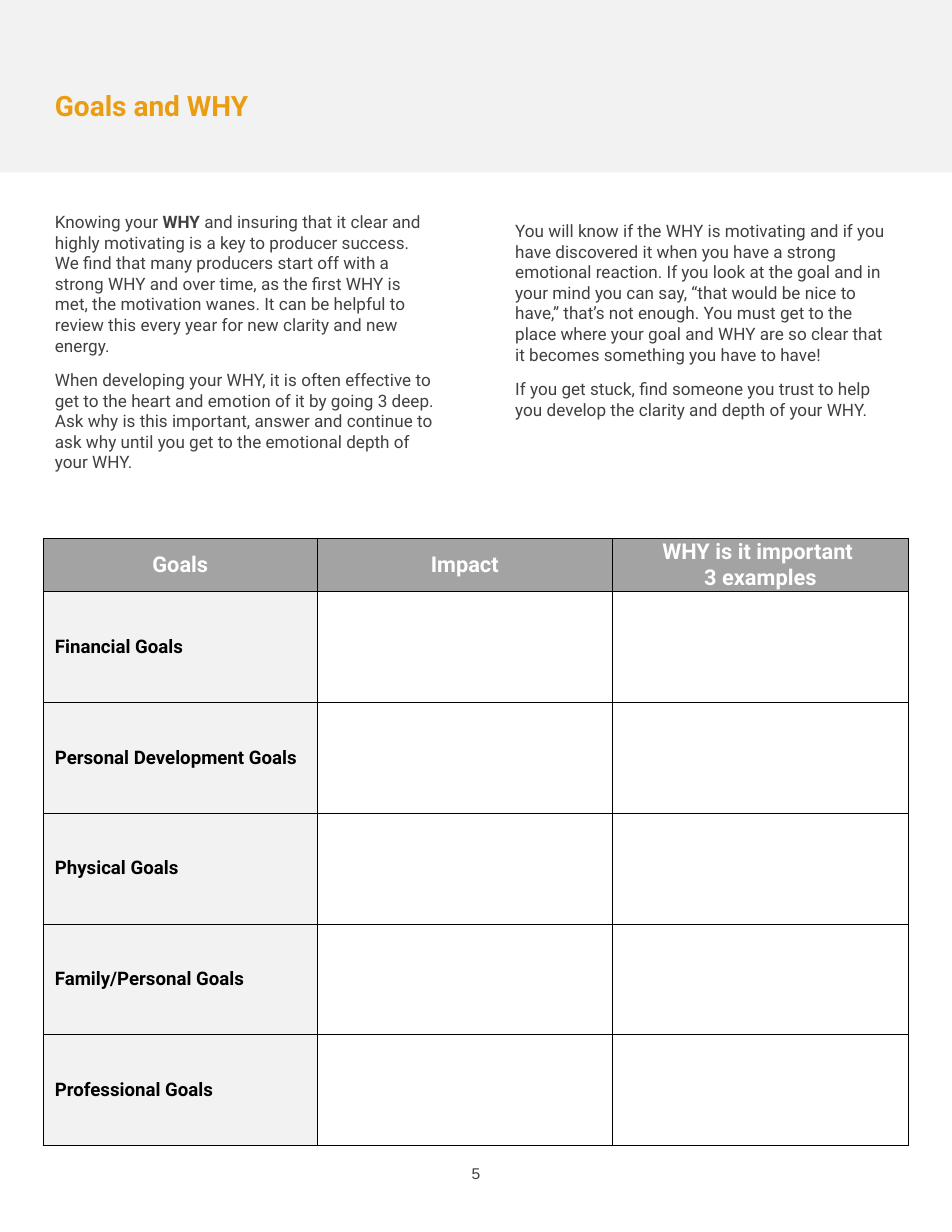
"""Build the Goals and WHY worksheet page."""
from dataclasses import dataclass

from pptx import Presentation
from pptx.dml.color import RGBColor
from pptx.enum.shapes import MSO_SHAPE
from pptx.enum.text import MSO_ANCHOR, MSO_AUTO_SIZE, PP_ALIGN
from pptx.oxml import parse_xml
from pptx.oxml.ns import nsdecls
from pptx.util import Inches, Pt

ORANGE, DARK, BLACK, WHITE = "EB9C0F", "404040", "000000", "FFFFFF"
PALE, GREY = "F2F2F2", "A3A3A3"


@dataclass
class TextStyle:
    size: float
    color: str
    bold: bool = False
    font: str = "Roboto"


@dataclass
class Column:
    left: float
    top: float
    height: float
    paragraphs: tuple


TITLE = TextStyle(18, ORANGE, True)
BODY = TextStyle(11, DARK)
HEADING = TextStyle(14, WHITE, True)
GOAL = TextStyle(12, BLACK, True)
PAGE_NUMBER = TextStyle(10, DARK, font="Arial")

COLUMNS = (
    Column(0.39, 1.84, 2.45, (
        "Knowing your **WHY** and insuring that it clear and highly motivating is a key to "
        "producer success. We find that many producers start off with a strong WHY and over "
        "time, as the first WHY is met, the motivation wanes. It can be helpful to review "
        "this every year for new clarity and new energy.",
        "When developing your WHY, it is often effective to get to the heart and emotion of "
        "it by going 3 deep. Ask why is this important, answer and continue to ask why until "
        "you get to the emotional depth of your WHY.",
    )),
    Column(4.5, 1.92, 1.89, (
        "You will know if the WHY is motivating and if you have discovered it when you have "
        "a strong emotional reaction. If you look at the goal and in your mind you can say, "
        "“that would be nice to have,” that’s not enough. You must get to the place where "
        "your goal and WHY are so clear that it becomes something you have to have!",
        "If you get stuck, find someone you trust to help you develop the clarity and depth "
        "of your WHY.",
    )),
)
HEADINGS = ("Goals", "Impact", "WHY is it important \v3 examples")
GOALS = ("Financial Goals", "Personal Development Goals", "Physical Goals",
         "Family/Personal Goals", "Professional Goals")
COLUMN_WIDTHS = (2.44, 2.64, 2.64)
HEADING_HEIGHT, GOAL_HEIGHT = 0.47, 0.99


def rgb(color: str) -> RGBColor:
    """Turn a hex string into a colour."""
    return RGBColor.from_string(color)


def place(shape, left: float, top: float, width: float, height: float) -> None:
    """Set position and size in inches."""
    shape.left, shape.top = Inches(left), Inches(top)
    shape.width, shape.height = Inches(width), Inches(height)


def format_run(run, style: TextStyle, bold: bool) -> None:
    """Apply a text style to one run."""
    run.font.name, run.font.size = style.font, Pt(style.size)
    run.font.bold, run.font.color.rgb = bold, rgb(style.color)


def format_paragraph(paragraph, style: TextStyle, align=PP_ALIGN.LEFT) -> None:
    """Align a paragraph and style its runs."""
    paragraph.alignment = align
    for run in paragraph.runs:
        format_run(run, style, style.bold)


def add_title(slide, title: str) -> None:
    """Fill the title placeholder."""
    place(slide.shapes.title, 0.39, 0.74, 2.08, 0.4)
    frame = slide.shapes.title.text_frame
    frame.text = title
    frame.auto_size = MSO_AUTO_SIZE.NONE
    frame.vertical_anchor = MSO_ANCHOR.MIDDLE
    format_paragraph(frame.paragraphs[0], TITLE)


def add_band(slide) -> None:
    """Draw the pale band behind the title."""
    band = slide.shapes.add_shape(MSO_SHAPE.RECTANGLE, 0, 0, Inches(8.5), Inches(1.54))
    band.shadow.inherit = False
    band.fill.solid()
    band.fill.fore_color.rgb = rgb(PALE)
    band.line.fill.background()
    slide.shapes.element.insert(2, band.element)


def fill_column(placeholder, column: Column) -> None:
    """Write a text column, with ** around bold words."""
    place(placeholder, column.left, column.top, 3.61, column.height)
    frame = placeholder.text_frame
    frame.auto_size = MSO_AUTO_SIZE.NONE
    frame.text = "\n".join(column.paragraphs)
    for paragraph, wording in zip(frame.paragraphs, column.paragraphs):
        paragraph.clear()
        paragraph.space_before, paragraph.space_after = Pt(0), Pt(9)
        properties = paragraph._p.get_or_add_pPr()
        properties.set("marL", "0")
        properties.set("indent", "0")
        properties.append(parse_xml(f"<a:buNone {nsdecls('a')}/>"))
        for index, part in enumerate(wording.split("**")):
            run = paragraph.add_run()
            run.text = part
            format_run(run, BODY, index % 2 == 1)


def add_borders(cell) -> None:
    """Draw thin black lines on all four sides of a cell."""
    properties = cell._tc.get_or_add_tcPr()
    for side in ("lnL", "lnR", "lnT", "lnB"):
        properties.append(parse_xml(
            f'<a:{side} {nsdecls("a")} w="{Pt(0.5)}"><a:solidFill>'
            f'<a:srgbClr val="{BLACK}"/></a:solidFill></a:{side}>'))


def fill_cell(cell, wording: str, style: TextStyle, color: str, align=PP_ALIGN.LEFT) -> None:
    """Write and colour one table cell."""
    cell.fill.solid()
    cell.fill.fore_color.rgb = rgb(color)
    cell.vertical_anchor = MSO_ANCHOR.MIDDLE
    cell.margin_left = cell.margin_right = cell.margin_top = cell.margin_bottom = 0
    paragraph = cell.text_frame.paragraphs[0]
    paragraph.text = wording
    format_paragraph(paragraph, style, align)


def add_goal_table(slide) -> None:
    """Add the worksheet table."""
    height = HEADING_HEIGHT + GOAL_HEIGHT * len(GOALS)
    table = slide.shapes.add_table(
        len(GOALS) + 1, len(HEADINGS), Inches(0.39), Inches(4.81),
        Inches(sum(COLUMN_WIDTHS)), Inches(height)).table
    table.first_row = table.horz_banding = False
    for column, width in zip(table.columns, COLUMN_WIDTHS):
        column.width = Inches(width)
    for index, row in enumerate(table.rows):
        row.height = Inches(GOAL_HEIGHT if index else HEADING_HEIGHT)
    for cell in table.iter_cells():
        add_borders(cell)
        cell.fill.background()
    for index, heading in enumerate(HEADINGS):
        fill_cell(table.cell(0, index), heading, HEADING, GREY, PP_ALIGN.CENTER)
    for index, goal in enumerate(GOALS, start=1):
        cell = table.cell(index, 0)
        fill_cell(cell, goal, GOAL, PALE)
        cell.text_frame.paragraphs[0]._p.get_or_add_pPr().set("marL", str(Inches(0.1)))


def add_page_number(slide, number: str) -> None:
    """Write the page number at the foot."""
    frame = slide.shapes.add_textbox(
        Inches(4), Inches(10.34), Inches(0.5), Inches(0.27)).text_frame
    frame.word_wrap = True
    frame.text = number
    format_paragraph(frame.paragraphs[0], PAGE_NUMBER, PP_ALIGN.CENTER)


def main() -> None:
    """Build and save the page."""
    presentation = Presentation()
    presentation.slide_width, presentation.slide_height = Inches(8.5), Inches(11)
    slide = presentation.slides.add_slide(presentation.slide_layouts[3])
    add_band(slide)
    add_title(slide, "Goals and WHY")
    for index, column in enumerate(COLUMNS, start=1):
        fill_column(slide.placeholders[index], column)
    add_goal_table(slide)
    add_page_number(slide, "5")
    presentation.save("out.pptx")


if __name__ == "__main__":
    main()
